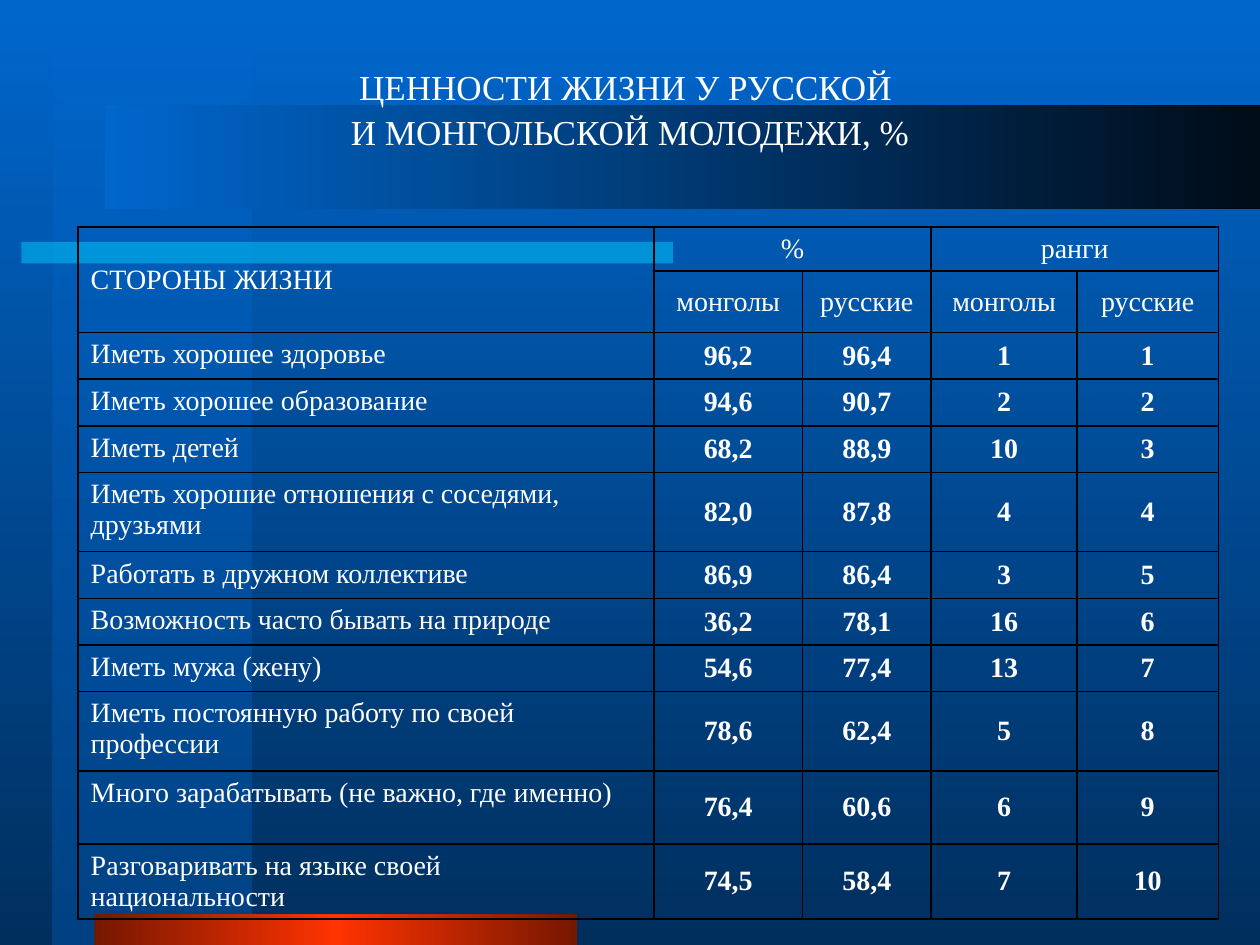
from lxml import etree
from pptx import Presentation
from pptx.dml.color import RGBColor
from pptx.enum import shapes, text
from pptx.oxml import ns
from pptx.util import Inches, Pt

FONT = "Times New Roman"
WHITE = "FFFFFF"
COLUMNS = [4.57, 1.18, 1.02, 1.16, 1.12]
ROWS = [0.35, 0.49] + [0.37] * 3 + [0.63] + [0.37] * 3 + [0.63, 0.58, 0.58]
HEADER = [
    ["СТОРОНЫ ЖИЗНИ", "%", "", "ранги", ""],
    ["", "монголы", "русские", "монголы", "русские"],
]
VALUES = [
    ["Иметь хорошее здоровье", "96,2", "96,4", "1", "1"],
    ["Иметь хорошее образование", "94,6", "90,7", "2", "2"],
    ["Иметь детей", "68,2", "88,9", "10", "3"],
    ["Иметь хорошие отношения с соседями, друзьями", "82,0", "87,8", "4", "4"],
    ["Работать в дружном коллективе", "86,9", "86,4", "3", "5"],
    ["Возможность часто бывать на природе", "36,2", "78,1", "16", "6"],
    ["Иметь мужа (жену)", "54,6", "77,4", "13", "7"],
    ["Иметь постоянную работу по своей профессии", "78,6", "62,4", "5", "8"],
    ["Много зарабатывать (не важно, где именно)", "76,4", "60,6", "6", "9"],
    ["Разговаривать на языке своей национальности", "74,5", "58,4", "7", "10"],
]


def color(value):
    return RGBColor.from_string(value)


def child(parent, tag, **attributes):
    return etree.SubElement(parent, ns.qn(tag), **attributes)


class SlideBuilder:
    """Hold the text style and the current slide, and add its elements."""

    def __init__(self, page, font, ink):
        self.page, self.font, self.ink = page, font, ink

    def style(self, para, size, align, bold=False):
        para.alignment = align
        para.font.name = self.font
        para.font.size = Pt(size)
        para.font.bold = bold
        para.font.color.rgb = color(self.ink)

    def gradient(self, fill, holder, colors, angle, alpha=100):
        fill.gradient()
        fill.gradient_angle = angle
        stops = holder.find(".//" + ns.qn("a:gsLst"))
        for stop in list(stops):
            stops.remove(stop)
        for index, value in enumerate(colors):
            position = 100000 * index // (len(colors) - 1)
            stop = child(stops, "a:gs", pos=str(position))
            self.fade(child(stop, "a:srgbClr", val=value), alpha)

    def fade(self, element, alpha):
        if alpha < 100:
            child(element, "a:alpha", val=str(alpha * 1000))

    def background(self, colors, angle):
        self.gradient(self.page.background.fill, self.page._element, colors, angle)

    def bar(self, left, top, width, height, colors, angle=0, alpha=100):
        bar = self.page.shapes.add_shape(
            shapes.MSO_SHAPE.RECTANGLE,
            Inches(left), Inches(top), Inches(width), Inches(height))
        bar.shadow.inherit = False
        bar.line.fill.background()
        if len(colors) > 1:
            self.gradient(bar.fill, bar._element, colors, angle, alpha)
        else:
            bar.fill.solid()
            bar.fill.fore_color.rgb = color(colors[0])
            self.fade(bar._element.spPr.find(".//" + ns.qn("a:srgbClr")), alpha)

    def title(self, words, left, top, width, height):
        title = self.page.shapes.title
        title.left, title.top = Inches(left), Inches(top)
        title.width, title.height = Inches(width), Inches(height)
        frame = title.text_frame
        frame.text = words
        frame.word_wrap = True
        frame.auto_size = text.MSO_AUTO_SIZE.NONE
        frame.vertical_anchor = text.MSO_ANCHOR.MIDDLE
        frame.margin_top, frame.margin_bottom = 0, Inches(0.17)
        para = frame.paragraphs[0]
        para.line_spacing = Pt(25.7)
        self.style(para, 20, text.PP_ALIGN.CENTER)
        self.page.shapes._spTree.append(title._element)

    def borders(self, cell):
        properties = cell._tc.get_or_add_tcPr()
        for side in ("a:lnL", "a:lnR", "a:lnT", "a:lnB"):
            line = child(properties, side, w=str(Pt(1)))
            child(child(line, "a:solidFill"), "a:srgbClr", val="000000")

    def table(self, left, top, columns, rows, content, header_rows):
        table = self.page.shapes.add_table(
            len(rows), len(columns), Inches(left), Inches(top),
            Inches(sum(columns)), Inches(sum(rows))).table
        table.first_row = table.horz_banding = False
        for column, width in zip(table.columns, columns):
            column.width = Inches(width)
        for row, height in zip(table.rows, rows):
            row.height = Inches(height)
        for r, record in enumerate(content):
            for c, words in enumerate(record):
                cell = table.cell(r, c)
                cell.text = words
                self.borders(cell)
                cell.fill.background()
                label, header = c == 0, r < header_rows
                at_top = label and not header or r == 0 and not label
                cell.vertical_anchor = (
                    text.MSO_ANCHOR.TOP if at_top else text.MSO_ANCHOR.MIDDLE)
                align = text.PP_ALIGN.LEFT if label else text.PP_ALIGN.CENTER
                self.style(cell.text_frame.paragraphs[0], 16, align,
                           bold=not label and not header)
        return table


def main():
    deck = Presentation()
    deck.slide_width, deck.slide_height = Inches(10), Inches(7.5)
    page = deck.slides.add_slide(deck.slide_layouts[5])
    builder = SlideBuilder(page, FONT, WHITE)

    builder.background(["0066CC", "002F5E"], 270)
    builder.bar(0.42, 0, 1.58, 7.5, ["0066CC", "0053A6"], 270, alpha=50)
    builder.bar(0.17, 1.92, 5.17, 0.17, ["00CCFF"], alpha=50)
    builder.bar(0.75, 7.25, 3.83, 0.25, ["761700", "FF3300", "761700"])
    builder.bar(0.83, 0.83, 9.17, 0.83, ["0066CC", "000C18"])
    builder.title("ЦЕННОСТИ ЖИЗНИ У РУССКОЙ \vИ МОНГОЛЬСКОЙ МОЛОДЕЖИ, %",
                  0.75, 0.47, 8.5, 0.94)

    table = builder.table(0.62, 1.8, COLUMNS, ROWS, HEADER + VALUES, len(HEADER))
    table.cell(0, 0).merge(table.cell(1, 0))
    for first in (1, 3):
        table.cell(0, first).merge(table.cell(0, first + 1))

    deck.save("out.pptx")


if __name__ == "__main__":
    main()
